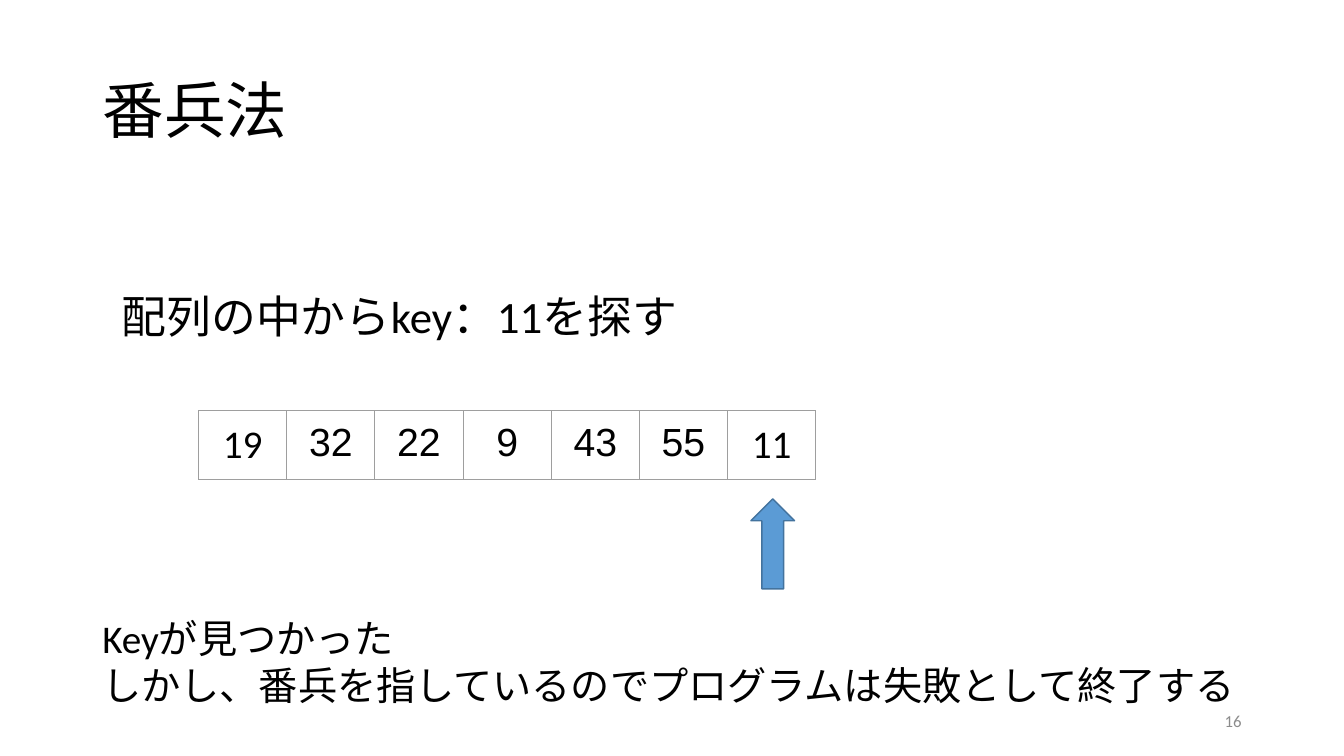
from dataclasses import dataclass

from lxml import etree
from pptx import Presentation
from pptx.dml.color import RGBColor
from pptx.enum.shapes import MSO_SHAPE
from pptx.enum.text import MSO_ANCHOR, MSO_AUTO_SIZE, PP_ALIGN
from pptx.oxml.ns import qn
from pptx.util import Inches, Pt

BLACK = RGBColor(0x00, 0x00, 0x00)
GRAY = RGBColor(0x8C, 0x8C, 0x8C)
RULE = RGBColor(0x9E, 0x9E, 0x9E)
BLUE = RGBColor(0x5B, 0x9B, 0xD5)
NAVY = RGBColor(0x43, 0x73, 0x9E)
LEFT, CENTER, RIGHT = PP_ALIGN.LEFT, PP_ALIGN.CENTER, PP_ALIGN.RIGHT
TOP, MIDDLE = MSO_ANCHOR.TOP, MSO_ANCHOR.MIDDLE
GROW, FIXED = MSO_AUTO_SIZE.SHAPE_TO_FIT_TEXT, MSO_AUTO_SIZE.NONE
UP_ARROW = MSO_SHAPE.UP_ARROW

WIDTH, HEIGHT = Inches(13.33), Inches(7.5)
COLS, ROWS = 160, 90
SANS, ARIAL = "Calibri", "Arial"


@dataclass(frozen=True)
class Area:
    col: float
    row: float
    wide: float
    high: float

    def box(self) -> tuple[int, int, int, int]:
        return (
            round(self.col * WIDTH / COLS),
            round(self.row * HEIGHT / ROWS),
            round(self.wide * WIDTH / COLS),
            round(self.high * HEIGHT / ROWS),
        )


@dataclass(frozen=True)
class Note:
    text: str
    area: Area
    size: int
    color: RGBColor = BLACK
    align: PP_ALIGN = LEFT
    anchor: MSO_ANCHOR = TOP
    fit: MSO_AUTO_SIZE = GROW


@dataclass(frozen=True)
class Item:
    text: str
    font: str = ARIAL


TITLE = Area(11, 4.8, 138, 17.4)
ARRAY = Area(23.64, 48.9, 73.5, 8.16)
ARROW = Area(89.4, 59.4, 5.2, 10.7)
ITEMS = [
    Item("19", SANS), Item("32"), Item("22"), Item("9"),
    Item("43"), Item("55"), Item("11", SANS),
]
NOTES = [
    Note("配列の中からkey：11を探す", Area(13.3, 33.84, 68.76, 7.68), 32),
    Note("Keyが見つかった\nしかし、番兵を指しているのでプログラムは失敗として終了する",
         Area(11, 72.5, 138, 12.5), 28),
    Note("16", Area(113, 83.4, 36, 4.8), 12, GRAY, RIGHT, MIDDLE, FIXED),
]


def style(frame, size: int, color: RGBColor = BLACK,
          align: PP_ALIGN = LEFT, font: str = SANS) -> None:
    for para in frame.paragraphs:
        para.alignment = align
        for run in para.runs:
            run.font.size = Pt(size)
            run.font.name = font
            run.font.color.rgb = color


def draw_title(slide, text: str) -> None:
    title = slide.shapes.title
    title.left, title.top, title.width, title.height = TITLE.box()
    frame = title.text_frame
    frame.text = text
    frame.vertical_anchor = MIDDLE
    frame.paragraphs[0].line_spacing = 0.9
    style(frame, 44)


def draw_note(slide, note: Note) -> None:
    frame = slide.shapes.add_textbox(*note.area.box()).text_frame
    frame.text = note.text
    frame.word_wrap = True
    frame.auto_size = note.fit
    frame.vertical_anchor = note.anchor
    style(frame, note.size, note.color, note.align)


def add_rules(cell) -> None:
    props = cell._tc.get_or_add_tcPr()
    for place, side in enumerate(("a:lnL", "a:lnR", "a:lnT", "a:lnB")):
        line = etree.Element(qn(side), w=str(Pt(0.75)))
        fill = etree.SubElement(line, qn("a:solidFill"))
        etree.SubElement(fill, qn("a:srgbClr"), val=str(RULE))
        props.insert(place, line)


def draw_array(slide, items: list[Item]) -> None:
    table = slide.shapes.add_table(1, len(items), *ARRAY.box()).table
    table.first_row = False
    table.horz_banding = False
    for cell, item in zip(table.rows[0].cells, items):
        cell.fill.background()
        cell.margin_left = cell.margin_right = Inches(0.1)
        cell.margin_top = cell.margin_bottom = Inches(0.1)
        cell.text_frame.text = item.text
        style(cell.text_frame, 28, align=CENTER, font=item.font)
        add_rules(cell)


def draw_arrow(slide) -> None:
    arrow = slide.shapes.add_shape(UP_ARROW, *ARROW.box())
    arrow.shadow.inherit = False
    arrow.fill.solid()
    arrow.fill.fore_color.rgb = BLUE
    arrow.line.color.rgb = NAVY
    arrow.line.width = Pt(1)


def main() -> None:
    deck = Presentation()
    deck.slide_width, deck.slide_height = WIDTH, HEIGHT
    slide = deck.slides.add_slide(deck.slide_layouts.get_by_name("Title Only"))
    draw_title(slide, "番兵法")
    draw_array(slide, ITEMS)
    draw_arrow(slide)
    for note in NOTES:
        draw_note(slide, note)
    deck.save("out.pptx")


if __name__ == "__main__":
    main()
